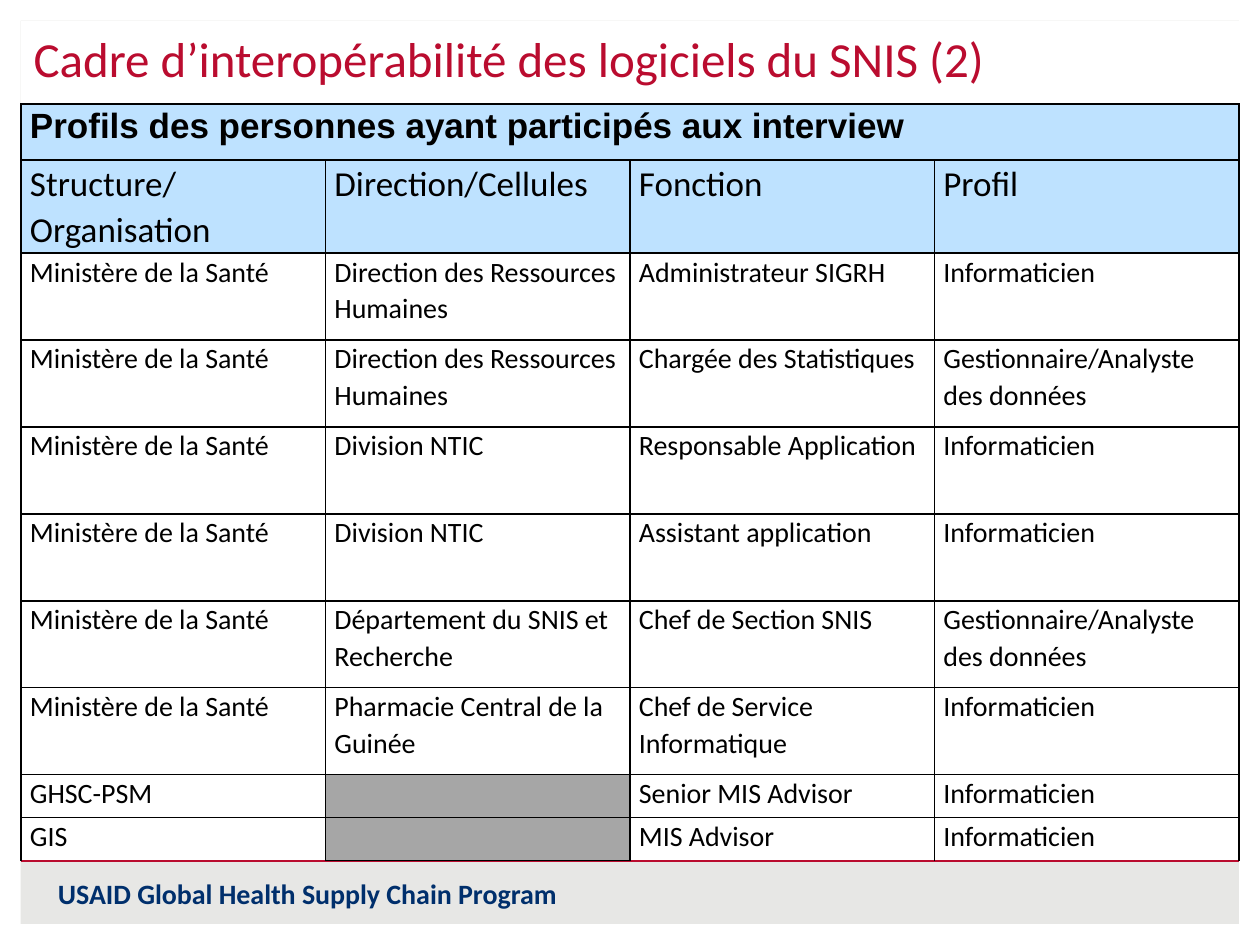
import dataclasses

import lxml.etree
import pptx
import pptx.dml.color
import pptx.enum.shapes
import pptx.enum.text
import pptx.oxml.ns
import pptx.util

SCALE = 914400 / 126


@dataclasses.dataclass(frozen=True)
class Theme:
    font: str = "Calibri"
    banner_font: str = "Arial"
    red: str = "BA0C2F"
    navy: str = "002F6C"
    black: str = "000000"
    white: str = "FFFFFF"
    backdrop: str = "E7E7E5"
    heading: str = "BEE2FF"
    blank: str = "A6A6A6"
    title_size: int = 28
    heading_size: int = 20
    body_size: int = 16
    rule_width: float = 0.75
    border_width: int = 1


def px(*lengths):
    return [pptx.util.Emu(round(length * SCALE)) for length in lengths]


def set_font(paragraph, family, size, color, bold=False):
    paragraph.font.name = family
    paragraph.font.size = pptx.util.Pt(size)
    paragraph.font.color.rgb = pptx.dml.color.RGBColor.from_string(color)
    paragraph.font.bold = bold


theme = Theme()
rgb = pptx.dml.color.RGBColor.from_string
qn = pptx.oxml.ns.qn

deck = pptx.Presentation()
deck.slide_width, deck.slide_height = px(1260, 945)
slide = deck.slides.add_slide(deck.slide_layouts[5])
slide.background.fill.solid()
slide.background.fill.fore_color.rgb = rgb(theme.backdrop)

title = slide.shapes.title
title.left, title.top, title.width, title.height = px(21, 21, 1218, 73)
title.text_frame.text = "Cadre d’interopérabilité des logiciels du SNIS (2)"
title.text_frame.auto_size = pptx.enum.text.MSO_AUTO_SIZE.NONE
title.text_frame.vertical_anchor = pptx.enum.text.MSO_ANCHOR.BOTTOM
title.text_frame.paragraphs[0].alignment = pptx.enum.text.PP_ALIGN.LEFT
set_font(title.text_frame.paragraphs[0], theme.font, theme.title_size, theme.red)

panel = slide.shapes.add_shape(
    pptx.enum.shapes.MSO_SHAPE.RECTANGLE, *px(21, 21, 1218, 840))
margin_frame = slide.shapes.add_shape(
    pptx.enum.shapes.MSO_SHAPE.FRAME, *px(0, 0, 1260, 945))
margin_frame.adjustments[0] = 0.022
for surface in (panel, margin_frame):
    surface.shadow.inherit = False
    surface.fill.solid()
    surface.fill.fore_color.rgb = rgb(theme.white)
    surface.line.fill.background()
slide.shapes._spTree.append(title._element)

program = slide.shapes.add_textbox(*px(58, 870, 635, 47))
program.text_frame.word_wrap = True
program.text_frame.margin_left = 0
program.text_frame.vertical_anchor = pptx.enum.text.MSO_ANCHOR.MIDDLE
program.text_frame.text = "USAID Global Health Supply Chain Program"
set_font(program.text_frame.paragraphs[0], theme.font, theme.body_size, theme.navy, True)

footer_rule = slide.shapes.add_connector(
    pptx.enum.shapes.MSO_CONNECTOR.STRAIGHT, *px(21, 861, 1239, 861))
footer_rule.line.color.rgb = rgb(theme.red)
footer_rule.line.width = pptx.util.Pt(theme.rule_width)
lxml.etree.SubElement(footer_rule._element.spPr, qn("a:effectLst"))

ministry = "Ministère de la Santé"
human_resources = "Direction des Ressources Humaines"
it_division = "Division NTIC"
it_specialist = "Informaticien"
data_analyst = "Gestionnaire/Analyste des données"
profiles = [
    ("Profils des personnes ayant participés aux interview", "", "", ""),
    ("Structure/Organisation", "Direction/Cellules", "Fonction", "Profil"),
    (ministry, human_resources, "Administrateur SIGRH", it_specialist),
    (ministry, human_resources, "Chargée des Statistiques", data_analyst),
    (ministry, it_division, "Responsable Application", it_specialist),
    (ministry, it_division, "Assistant application", it_specialist),
    (ministry, "Département du SNIS et Recherche", "Chef de Section SNIS", data_analyst),
    (ministry, "Pharmacie Central de la Guinée", "Chef de Service Informatique", it_specialist),
    ("GHSC-PSM", "", "Senior MIS Advisor", it_specialist),
    ("GIS", "", "MIS Advisor", it_specialist),
]
row_heights = [56, 93] + [87] * 6 + [43] * 2
last_row = len(profiles) - 1

table = slide.shapes.add_table(len(profiles), 4, *px(21, 104, 1218, 757)).table
table.first_row = False
table.horz_banding = False
for column in table.columns:
    column.width = px(1218)[0] // 4
for row, height in zip(table.rows, px(*row_heights)):
    row.height = height

for row_index, profile in enumerate(profiles):
    is_banner = row_index == 0
    is_heading = row_index < 2
    for column_index, entry in enumerate(profile):
        cell = table.cell(row_index, column_index)
        cell.margin_left, cell.margin_right = px(9, 9)
        cell.margin_top = cell.margin_bottom = 0
        cell.text = entry
        paragraph = cell.text_frame.paragraphs[0]
        paragraph.line_spacing = 1.07
        set_font(paragraph,
                 theme.banner_font if is_banner else theme.font,
                 theme.heading_size if is_heading else theme.body_size,
                 theme.black, is_banner)
        properties = cell._tc.get_or_add_tcPr()
        for side in ("lnL", "lnR", "lnT", "lnB"):
            border = lxml.etree.SubElement(
                properties, qn(f"a:{side}"), w=str(pptx.util.Pt(theme.border_width)))
            if side == "lnB" and row_index == last_row and entry:
                lxml.etree.SubElement(border, qn("a:noFill"))
            else:
                stroke = lxml.etree.SubElement(border, qn("a:solidFill"))
                lxml.etree.SubElement(stroke, qn("a:srgbClr"), val=theme.black)
        if is_heading or not entry:
            cell.fill.solid()
            cell.fill.fore_color.rgb = rgb(theme.heading if is_heading else theme.blank)
        else:
            cell.fill.background()
table.cell(0, 0).merge(table.cell(0, 3))

deck.save("out.pptx")
